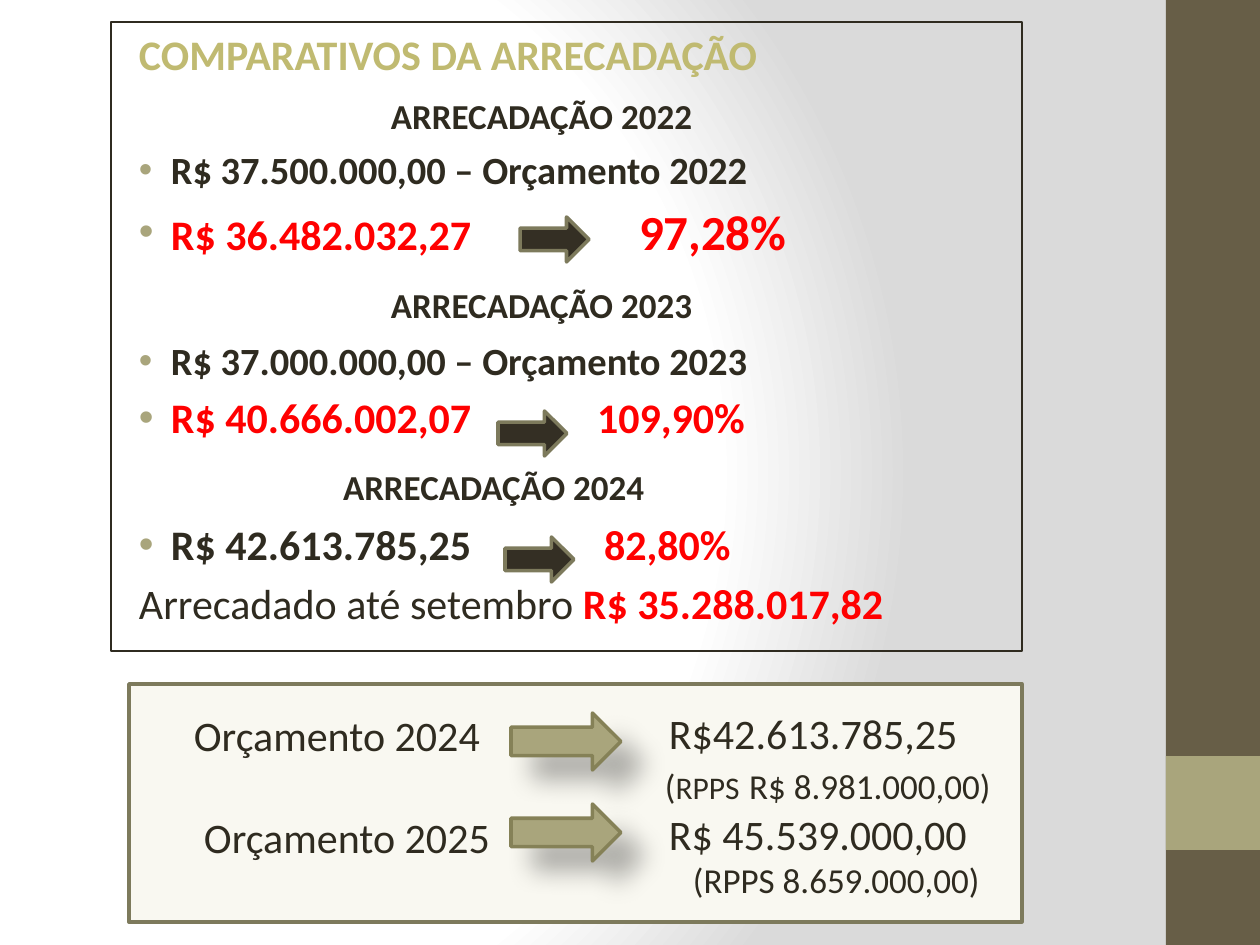
from lxml import etree
from pptx import Presentation
from pptx import util as u
from pptx.dml.color import RGBColor
from pptx.enum import shapes, text
from pptx.oxml import parse_xml
from pptx.oxml.ns import nsdecls, qn

INK = RGBColor(0x2F, 0x2B, 0x20)
TITLE = RGBColor(0xC0, 0xBA, 0x71)
RED = RGBColor(0xFF, 0x00, 0x00)
BROWN = RGBColor(0x67, 0x5E, 0x47)
OLIVE = RGBColor(0xA9, 0xA5, 0x7C)
OLIVE_EDGE = RGBColor(0x85, 0x81, 0x57)
DARK = RGBColor(0x34, 0x2F, 0x24)
EDGE = RGBColor(0x7D, 0x7A, 0x5C)
CREAM = RGBColor(0xF9, 0xF8, 0xF1)
BLACK = RGBColor(0x00, 0x00, 0x00)
WHITE = RGBColor(0xFF, 0xFF, 0xFF)
GRAY = RGBColor(0xDA, 0xDA, 0xDA)


class SlideWriter:
    font = "Calibri"

    def __init__(self, slide):
        self.slide = slide

    def px(self, value):
        return u.Emu(round(value * 914400 / 126))

    def background(self, stops):
        colors = "".join(
            f'<a:gs pos="{position * 1000}"><a:srgbClr val="{color}"/></a:gs>'
            for position, color in stops)
        self.slide.element.cSld.insert(0, parse_xml(
            f'<p:bg {nsdecls("p", "a")}><p:bgPr><a:gradFill rotWithShape="1">'
            f'<a:gsLst>{colors}</a:gsLst><a:path path="circle">'
            '<a:fillToRect l="20000" t="50000" r="100000" b="50000"/></a:path>'
            '</a:gradFill><a:effectLst/></p:bgPr></p:bg>'))

    def shape(self, area, fill=None, line=None, width=2,
              kind=shapes.MSO_SHAPE.RECTANGLE):
        shape = self.slide.shapes.add_shape(kind, *map(self.px, area))
        shape.shadow.inherit = False
        if fill is None:
            shape.fill.background()
        else:
            shape.fill.solid()
            shape.fill.fore_color.rgb = fill
        if line is None:
            shape.line.fill.background()
        else:
            shape.line.color.rgb = line
            shape.line.width = u.Pt(width)
        return shape

    def arrow(self, area, fill, line):
        return self.shape(area, fill, line, kind=shapes.MSO_SHAPE.RIGHT_ARROW)

    def shadow(self, shape):
        effects = shape._element.spPr.find(qn("a:effectLst"))
        effects.append(parse_xml(
            f'<a:outerShdw {nsdecls("a")} blurRad="{u.Pt(15)}" dist="{u.Pt(18)}" '
            f'dir="2700000" algn="tl" rotWithShape="0"><a:srgbClr val="{BLACK}">'
            '<a:alpha val="30000"/></a:srgbClr></a:outerShdw>'))

    def textbox(self, area):
        return self.slide.shapes.add_textbox(*map(self.px, area))

    def frame(self, box, anchor, top=6):
        frame = box.text_frame
        frame.word_wrap = True
        frame.vertical_anchor = anchor
        frame.margin_left = frame.margin_right = self.px(13)
        frame.margin_top, frame.margin_bottom = self.px(top), self.px(6)
        return frame

    def para(self, frame, spans, left=0, before=0, after=0, bullet=False, tab=None):
        first = not frame.paragraphs[0].runs
        para = frame.paragraphs[0] if first else frame.add_paragraph()
        para.alignment = text.PP_ALIGN.LEFT
        para.space_before = u.Pt(0 if first else before)
        para.space_after = u.Pt(after)
        props = para._p.get_or_add_pPr()
        props.set("marL", str(self.px(left)))
        props.set("indent", str(self.px(-32 if bullet else 0)))
        if bullet:
            color = etree.SubElement(props, qn("a:buClr"))
            etree.SubElement(color, qn("a:srgbClr"), val=str(OLIVE))
            etree.SubElement(props, qn("a:buFont"), typeface="Arial")
            etree.SubElement(props, qn("a:buChar"), char="•")
        else:
            etree.SubElement(props, qn("a:buNone"))
        if tab:
            stops = etree.SubElement(props, qn("a:tabLst"))
            etree.SubElement(stops, qn("a:tab"), pos=str(self.px(tab)), algn="l")
        for words, size, color, bold in spans:
            span = para.add_run()
            span.text = words
            span.font.name = self.font
            span.font.size = u.Pt(size)
            span.font.bold = bold
            span.font.color.rgb = color


def add_comparison(writer):
    box = writer.shape((111, 22, 911, 629), line=INK, width=1)
    frame = writer.frame(box, text.MSO_ANCHOR.TOP, top=7)

    def row(*spans, bullet=False, tab=None):
        before = max(span[1] for span in spans) / 5
        writer.para(frame, spans, 47 if bullet else 15, before,
                    bullet=bullet, tab=tab)

    def heading(year, left, before, after):
        writer.para(frame, [(f"ARRECADAÇÃO {year}", 20, INK, True)],
                    left, before, after)

    def budget(amount, year):
        row((f"R$ {amount} – Orçamento {year}", 22, INK, True), bullet=True)

    def result(amount, percent, tab, color=RED, size=24):
        row((f"R$ {amount}", 24, color, True), ("\t" + percent, size, RED, True),
            bullet=True, tab=tab)

    row(("COMPARATIVOS DA ARRECADAÇÃO", 24, TITLE, True))
    heading(2022, 267, 8.6, 1)
    budget("37.500.000,00", 2022)
    result("36.482.032,27", "97,28%", 515, size=28)
    heading(2023, 267, 13.2, 2)
    budget("37.000.000,00", 2023)
    result("40.666.002,07", "109,90%", 473)
    heading(2024, 219, 13.2, 2)
    result("42.613.785,25", "82,80%", 480, color=INK)
    row(("Arrecadado até setembro ", 24, INK, False),
        ("R$ 35.288.017,82", 24, RED, True))


def add_budgets(writer):
    box = writer.shape((129, 684, 893, 238), CREAM, EDGE)
    amounts = writer.frame(box, text.MSO_ANCHOR.MIDDLE, top=8)
    rows = [
        (527, [("R$42.613.785,25", 24)]),
        (523, [("(", 20), ("RPPS", 18), (" ", 24), ("R$ 8.981.000,00)", 20)]),
        (527, [("R$ 45.539.000,00", 24)]),
        (551, [("(RPPS 8.659.000,00)", 20)]),
    ]
    for left, spans in rows:
        writer.para(amounts, [(words, size, INK, False) for words, size in spans],
                    left)
    labels = writer.frame(writer.textbox((181, 704, 325, 166)), text.MSO_ANCHOR.TOP)
    for year, left in ((2024, 0), (2025, 10)):
        writer.para(labels, [(f"Orçamento {year}", 24, INK, False)], left, before=29)


def main():
    deck = Presentation()
    deck.slide_width, deck.slide_height = u.Inches(10), u.Inches(7.5)
    page = deck.slides.add_slide(deck.slide_layouts[6])
    writer = SlideWriter(page)
    writer.background([(0, WHITE), (75, WHITE), (100, GRAY)])
    writer.shape((1166, 0, 94, 945), BROWN)
    writer.shape((1166, 756, 94, 94), OLIVE)
    add_comparison(writer)
    add_budgets(writer)
    for top in (713, 804):
        writer.shadow(writer.arrow((511, top, 110, 57), OLIVE, OLIVE_EDGE))
    for left, top in ((520, 217), (498, 411), (505, 537)):
        writer.arrow((left, top, 69, 45), DARK, EDGE)
    deck.save("out.pptx")


if __name__ == "__main__":
    main()
